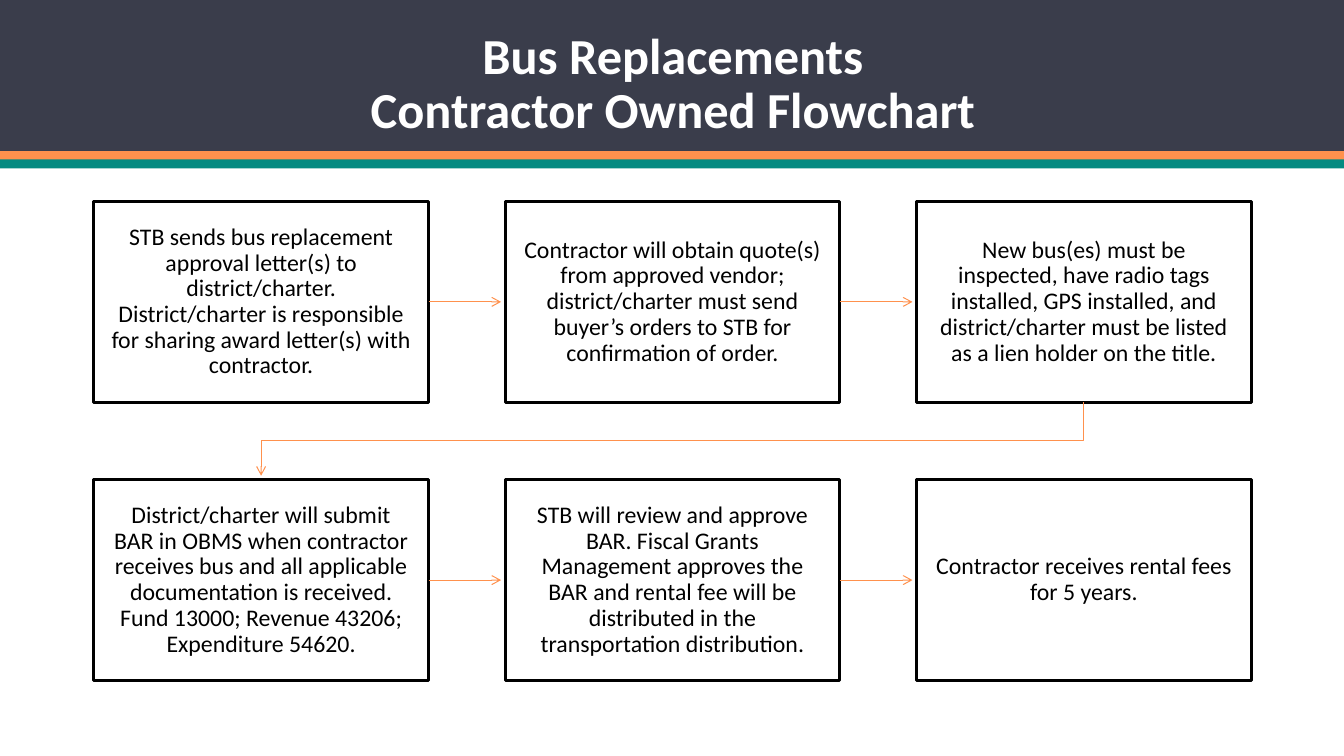
from pptx import Presentation
from pptx.dml.color import RGBColor
from pptx.enum.shapes import MSO_CONNECTOR, MSO_SHAPE
from pptx.enum.text import MSO_ANCHOR, MSO_AUTO_SIZE, PP_ALIGN
from pptx.oxml.ns import qn
from pptx.util import Inches, Pt
from lxml.etree import SubElement

COLORS = {
    "navy": "3A3D4B",
    "orange": "FF914D",
    "teal": "048A81",
    "black": "000000",
    "white": "FFFFFF",
}


def set_text(frame, text, size, color, bold):
    frame.text = text
    frame.word_wrap = True
    frame.auto_size = MSO_AUTO_SIZE.NONE
    frame.vertical_anchor = MSO_ANCHOR.MIDDLE
    para = frame.paragraphs[0]
    para.alignment = PP_ALIGN.CENTER
    para.line_spacing = 0.9
    for run in para.runs:
        run.font.name = "Calibri"
        run.font.size = Pt(size)
        run.font.bold = bold
        run.font.color.rgb = RGBColor.from_string(COLORS[color])


def set_arrow(shape):
    shape.line.color.rgb = RGBColor.from_string(COLORS["orange"])
    shape.line.width = Pt(0.75)
    SubElement(shape.line._get_or_add_ln(), qn("a:tailEnd"), type="arrow")


deck = Presentation()
deck.slide_width = Inches(13.33)
deck.slide_height = Inches(7.5)
slide = deck.slides.add_slide(deck.slide_layouts[5])
shapes = slide.shapes

title = shapes.title
title.left, title.top = Inches(0.19), Inches(0.28)
title.width, title.height = Inches(12.97), Inches(1.13)
set_text(title.text_frame, "Bus Replacements\vContractor Owned Flowchart", 36, "white", True)

bands = [("navy", 0, 1.5), ("orange", 1.5, 0.09), ("teal", 1.58, 0.09)]
for color, top, height in bands:
    band = shapes.add_shape(
        MSO_SHAPE.RECTANGLE, 0, Inches(top), deck.slide_width, Inches(height)
    )
    band.shadow.inherit = False
    band.fill.solid()
    band.fill.fore_color.rgb = RGBColor.from_string(COLORS[color])
    band.line.fill.background()
    title.element.addprevious(band.element)

steps = [
    "STB sends bus replacement approval letter(s) to district/charter. "
    "District/charter is responsible for sharing award letter(s) with contractor.",
    "Contractor will obtain quote(s) from approved vendor; district/charter "
    "must send buyer’s orders to STB for confirmation of order.",
    "New bus(es) must be inspected, have radio tags installed, GPS installed, "
    "and district/charter must be listed as a lien holder on the title.",
    "District/charter will submit BAR in OBMS when contractor receives bus and "
    "all applicable documentation is received. Fund 13000; Revenue 43206; "
    "Expenditure 54620.",
    "STB will review and approve BAR. Fiscal Grants Management approves the BAR "
    "and rental fee will be distributed in the transportation distribution.",
    "Contractor receives rental fees for 5 years.",
]
COLS = 3
LEFT, TOP = 0.93, 2
WIDTH, HEIGHT = 3.32, 1.99
STEP_X, STEP_Y = 4.08, 2.76
GAP = Inches(0.04)

boxes = []
for index, text in enumerate(steps):
    row, col = divmod(index, COLS)
    box = shapes.add_shape(
        MSO_SHAPE.RECTANGLE,
        Inches(LEFT + col * STEP_X),
        Inches(TOP + row * STEP_Y),
        Inches(WIDTH),
        Inches(HEIGHT),
    )
    box.shadow.inherit = False
    box.fill.background()
    box.line.color.rgb = RGBColor.from_string(COLORS["black"])
    box.line.width = Pt(2)
    frame = box.text_frame
    frame.margin_left = frame.margin_right = Inches(0.16)
    frame.margin_top = frame.margin_bottom = Inches(0.17)
    set_text(frame, text, 17, "black", False)
    boxes.append(box)

for index, (start, end) in enumerate(zip(boxes, boxes[1:])):
    if index % COLS < COLS - 1:
        mid = start.top + start.height // 2
        arrow = shapes.add_connector(
            MSO_CONNECTOR.STRAIGHT, start.left + start.width, mid, end.left - GAP, mid
        )
        arrow.begin_connect(start, 3)
        SubElement(arrow.element.spPr, qn("a:effectLst"))
    else:
        from_x = start.left + start.width // 2
        to_x = end.left + end.width // 2
        low = start.top + start.height
        turn = (low + end.top) // 2
        path = shapes.build_freeform(from_x, low, scale=1.0)
        path.add_line_segments(
            [(from_x, turn), (to_x, turn), (to_x, end.top - GAP)], close=False
        )
        arrow = path.convert_to_shape()
        arrow.shadow.inherit = False
        arrow.fill.background()
    set_arrow(arrow)

deck.save("out.pptx")
